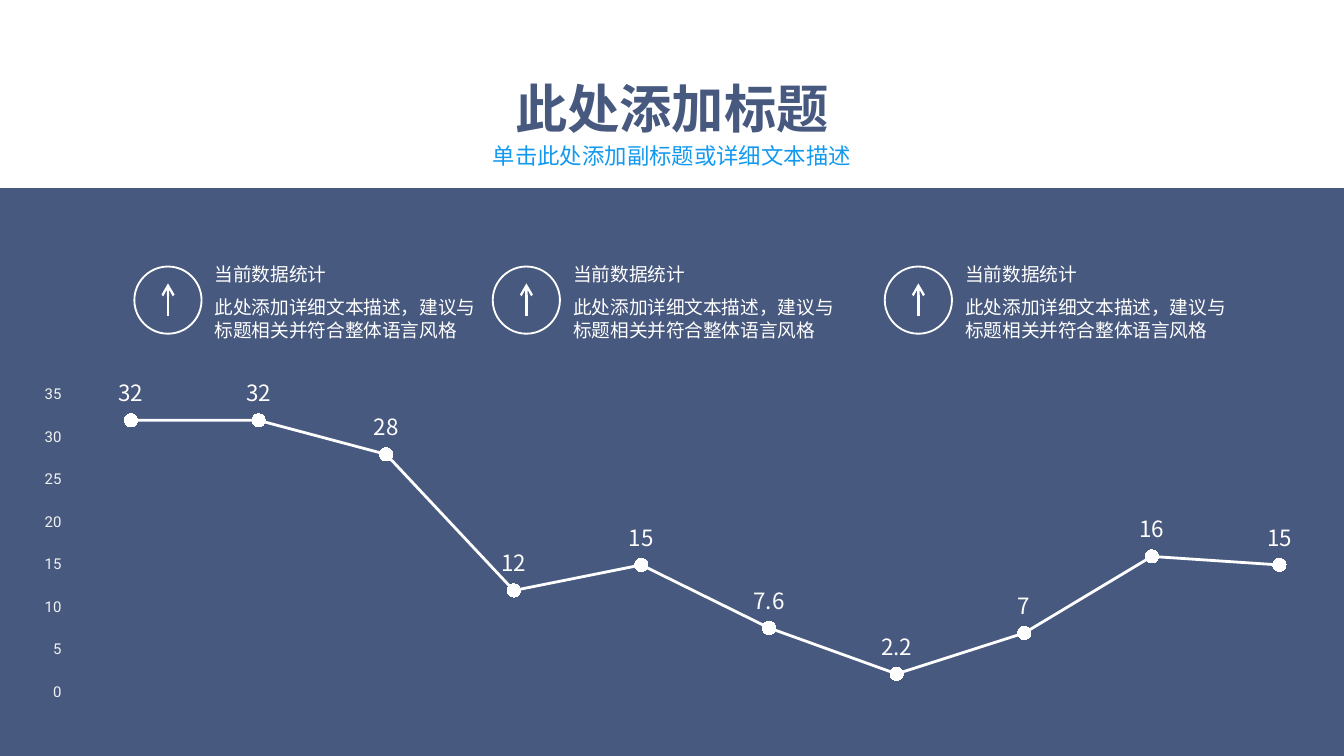
from dataclasses import dataclass

from lxml.etree import SubElement
from pptx import Presentation
from pptx.chart.data import CategoryChartData
from pptx.dml.color import RGBColor
from pptx.enum.chart import XL_CHART_TYPE as ChartType
from pptx.enum.chart import XL_LABEL_POSITION as LabelPosition
from pptx.enum.chart import XL_MARKER_STYLE as Marker
from pptx.enum.chart import XL_TICK_MARK as TickMark
from pptx.enum.shapes import MSO_CONNECTOR as Connector
from pptx.enum.shapes import MSO_SHAPE as Shape
from pptx.enum.text import MSO_ANCHOR as Anchor
from pptx.enum.text import PP_ALIGN as Align
from pptx.oxml import parse_xml
from pptx.oxml.ns import nsdecls, qn
from pptx.util import Inches, Pt


@dataclass(frozen=True)
class Theme:
    navy: RGBColor = RGBColor.from_string("48597F")
    blue: RGBColor = RGBColor.from_string("1399EE")
    white: RGBColor = RGBColor.from_string("FFFFFF")
    pale: RGBColor = RGBColor.from_string("F2F2F2")
    font: str = "Noto Sans CJK SC"
    axis_font: str = "Roboto"
    title: float = 28
    subtitle: float = 12
    body: float = 10
    value: float = 12
    axis: float = 8


def style(target, formats):
    for name, value in formats.items():
        setattr(target, name, value)


class SlideBuilder:
    columns = 120
    rows = 67.5

    def __init__(self, deck, theme):
        self.theme = theme
        self.page = deck.slides.add_slide(deck.slide_layouts[6])
        self.column = deck.slide_width / self.columns
        self.row = deck.slide_height / self.rows

    def place(self, left, top, width, height):
        return (round(left * self.column), round(top * self.row),
                round(width * self.column), round(height * self.row))

    def text(self, area, words, size, color, leading, bold=False,
             align=Align.LEFT, anchor=Anchor.TOP):
        box = self.page.shapes.add_textbox(*self.place(*area))
        style(box.text_frame, {"word_wrap": True, "vertical_anchor": anchor})
        para = box.text_frame.paragraphs[0]
        style(para, {"alignment": align, "line_spacing": Pt(leading)})
        span = para.add_run()
        span.text = words
        style(span.font, {"name": self.theme.font, "size": Pt(size), "bold": bold})
        span.font.color.rgb = color
        SubElement(span.font._element, qn("a:ea"), typeface=self.theme.font)

    def shape(self, kind, area, fill=None, outline=None):
        shape = self.page.shapes.add_shape(kind, *self.place(*area))
        shape.shadow.inherit = False
        for part, color in ((shape.fill, fill), (shape.line.fill, outline)):
            if color is None:
                part.background()
            else:
                part.solid()
                part.fore_color.rgb = color
        if outline is not None:
            shape.line.width = Pt(1)

    def arrow(self, column, start, end):
        x, y, _, rise = self.place(column, start, 0, end - start)
        arrow = self.page.shapes.add_connector(Connector.STRAIGHT, x, y, x, y + rise)
        arrow.line.color.rgb = self.theme.white
        arrow.line.width = Pt(1.25)
        SubElement(arrow.line._get_or_add_ln(), qn("a:tailEnd"), type="arrow")
        SubElement(arrow._element.spPr, qn("a:effectLst"))

    def statistic(self, column, heading, detail):
        theme = self.theme
        self.shape(Shape.OVAL, (column, 23.8, 6, 6), outline=theme.white)
        self.arrow(column + 3, 28.2, 25.3)
        for top, width, height, words in ((22.8, 21, 4, heading), (25.8, 26, 7, detail)):
            self.text((column + 6, top, width, height), words, theme.body, theme.white, 12.3)

    def line_chart(self, area, values):
        theme = self.theme
        data = CategoryChartData()
        data.categories = [str(number + 1) for number in range(len(values))]
        data.add_series("Series 1", values)
        chart = self.page.shapes.add_chart(
            ChartType.LINE_MARKERS, *self.place(*area), data).chart
        style(chart, {"has_legend": False, "has_title": False})
        style(chart.font, {"name": theme.font, "size": Pt(11)})
        chart.category_axis.visible = False
        axis = chart.value_axis
        style(axis, {"minimum_scale": 0, "maximum_scale": 35, "major_unit": 5,
                     "major_tick_mark": TickMark.NONE, "has_major_gridlines": True})
        axis.format.line.fill.background()
        grid = axis.major_gridlines.format.line
        grid.color.rgb = theme.navy
        grid.width = Pt(0.75)
        style(axis.tick_labels.font, {"name": theme.axis_font, "size": Pt(theme.axis)})
        axis.tick_labels.font.color.rgb = theme.pale

        plot = chart.plots[0]
        plot.vary_by_categories = False
        series = plot.series[0]
        series.smooth = False
        series.format.line.color.rgb = theme.white
        series.format.line.width = Pt(1.5)
        style(series.marker, {"style": Marker.CIRCLE, "size": 7})
        series.marker.format.fill.solid()
        series.marker.format.fill.fore_color.rgb = theme.white
        series.marker.format.line.color.rgb = theme.white
        labels = series.data_labels
        style(labels, {"show_value": True, "position": LabelPosition.ABOVE})
        style(labels.font, {"name": theme.font, "size": Pt(theme.value)})
        labels.font.color.rgb = theme.white
        self.plot_layout(chart, {"x": 0.05, "y": 0.17, "w": 0.95, "h": 0.7})

    def plot_layout(self, chart, shares):
        modes = "".join(f'<c:{side}Mode val="edge"/>' for side in "xy")
        sizes = "".join(f'<c:{side} val="{share}"/>' for side, share in shares.items())
        layout = parse_xml(
            f'<c:layout {nsdecls("c")}><c:manualLayout><c:layoutTarget val="inner"/>'
            f'{modes}{sizes}</c:manualLayout></c:layout>')
        area = chart._chartSpace.chart.plotArea
        for old in area.findall(qn("c:layout")):
            area.remove(old)
        area.insert(0, layout)


def main():
    deck = Presentation()
    style(deck, {"slide_width": Inches(10), "slide_height": Inches(5.625)})
    theme = Theme()
    slide = SlideBuilder(deck, theme)
    slide.shape(Shape.RECTANGLE, (0, 16.8, 120, 50.7), fill=theme.navy)
    slide.line_chart((0, 28.8, 120, 38), (32, 32, 28, 12, 15, 7.6, 2.2, 7, 16, 15))
    for column in (12, 44, 79):
        slide.statistic(column, "当前数据统计",
                        "此处添加详细文本描述，建议与标题相关并符合整体语言风格")
    slide.text((6, 3.7, 108, 11.3), "此处添加标题", theme.title, theme.navy, 37,
               bold=True, align=Align.CENTER, anchor=Anchor.MIDDLE)
    slide.text((27, 11.5, 66, 4.2), "单击此处添加副标题或详细文本描述",
               theme.subtitle, theme.blue, 18.2, align=Align.CENTER)
    deck.save("out.pptx")


if __name__ == "__main__":
    main()
